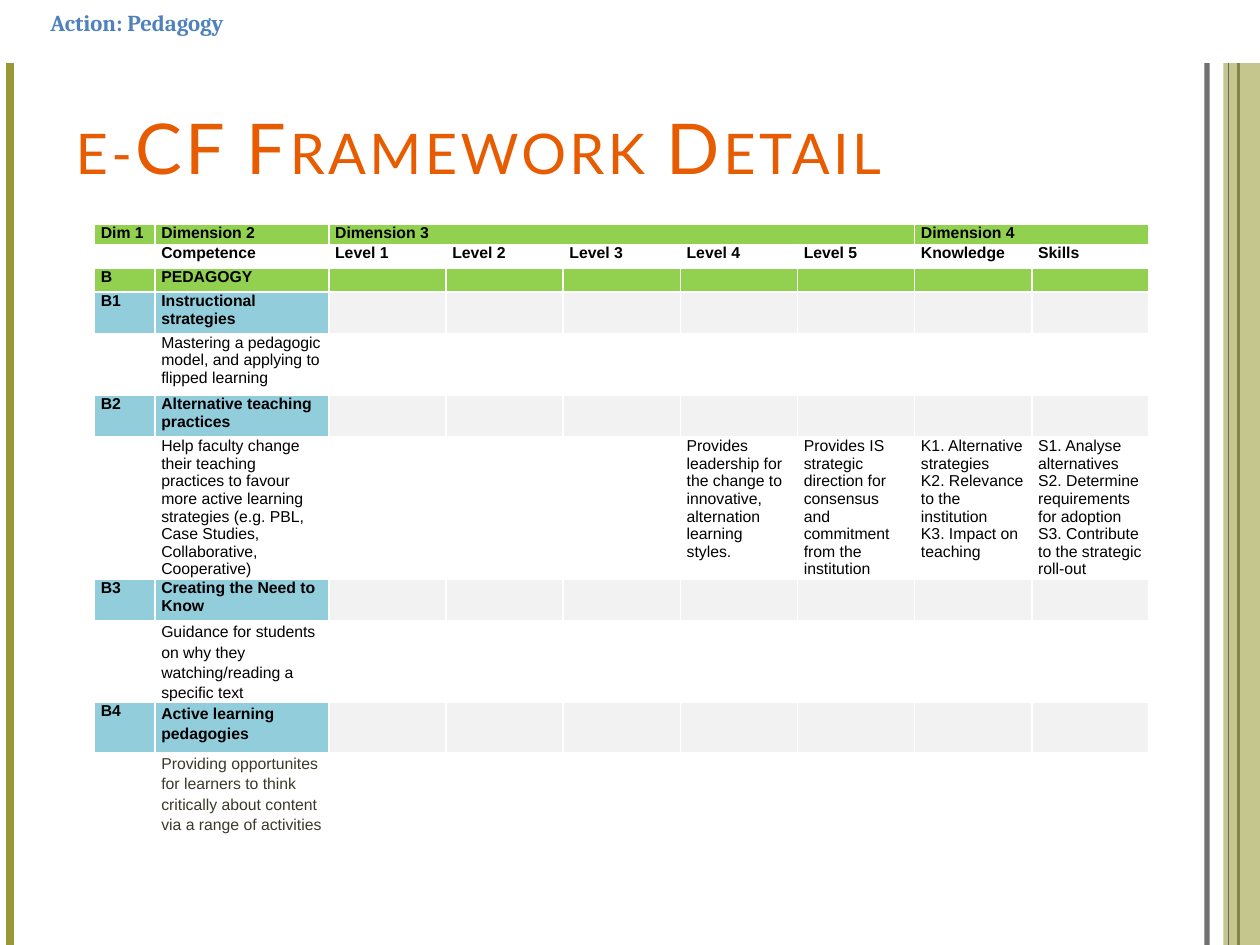
from dataclasses import dataclass

from lxml import etree
from pptx import Presentation
from pptx.dml.color import RGBColor as RGB
from pptx.enum.shapes import MSO_CONNECTOR as Connector, MSO_SHAPE as Shape
from pptx.enum.text import MSO_ANCHOR as Anchor, MSO_AUTO_SIZE as AutoSize, PP_ALIGN as Align
from pptx.oxml.ns import qn
from pptx.util import Inches, Pt


@dataclass(frozen=True)
class Theme:
    olive: str = "989836"
    grey: str = "666666"
    orange: str = "E75C01"
    blue: str = "4F81BD"
    green: str = "92D050"
    aqua: str = "92CDDC"
    pale: str = "F2F2F2"
    white: str = "FFFFFF"
    black: str = "000000"
    brown: str = "3B392A"
    title_size: int = 40
    banner_size: int = 13
    table_size: int = 9


theme = Theme()


def set_alpha(fill_parent, percent):
    color = fill_parent.find(".//" + qn("a:srgbClr"))
    etree.SubElement(color, qn("a:alpha"), val=str(percent * 1000))


def style_font(font, name, size, color, bold=False):
    font.name = name
    font.size = Pt(size)
    font.bold = bold
    font.color.rgb = RGB.from_string(color)


prs = Presentation()
prs.slide_width, prs.slide_height = Inches(10), Inches(7.5)
slide = prs.slides.add_slide(prs.slide_layouts[5])
shapes = slide.shapes

stripe = None
for x, color, width, opacity in [
    (9.58, theme.grey, 3, 93),
    (0.08, theme.olive, 4.5, 100),
    (9.83, theme.grey, 1.5, 100),
    (9.75, theme.grey, 0.75, 100),
]:
    if x == 9.75:
        stripe = shapes.add_shape(Shape.RECTANGLE, Inches(9.71), 0, Inches(0.33), prs.slide_height)
        stripe.shadow.inherit = False
        stripe.fill.solid()
        stripe.fill.fore_color.rgb = RGB.from_string(theme.olive)
        stripe.line.fill.background()
        set_alpha(stripe.element.spPr, 56)
    rule = shapes.add_connector(Connector.STRAIGHT, Inches(x), 0, Inches(x), prs.slide_height)
    rule.line.color.rgb = RGB.from_string(color)
    rule.line.width = Pt(width)
    if opacity < 100:
        set_alpha(rule.element.spPr, opacity)
    etree.SubElement(rule.element.spPr, qn("a:effectLst"))

title = shapes.title
title.left, title.top = Inches(0.5), Inches(0.3)
title.width, title.height = Inches(8.67), Inches(1.25)
title.text_frame.text = "e-CF Framework Detail"
title.text_frame.vertical_anchor = Anchor.BOTTOM
title.text_frame.auto_size = AutoSize.NONE
heading = title.text_frame.paragraphs[0]
heading.alignment = Align.LEFT
style_font(heading.runs[0].font, "Lato", theme.title_size, theme.orange)
heading_props = heading.runs[0].font._element
heading_props.set("cap", "small")
heading_props.set("spc", "200")

columns = [0.48, 1.38] + [0.93] * 7
levels = [f"Level {n}" for n in range(1, 6)]
rows = [
    (0.16, "band", ["Dim 1", "Dimension 2", "Dimension 3", "", "", "", "", "Dimension 4"]),
    (0.19, "labels", ["", "Competence", *levels, "Knowledge", "Skills"]),
    (0.19, "band", ["B", "PEDAGOGY"]),
    (0.33, "competence", ["B1", "Instructional strategies"]),
    (0.49, "detail", ["", "Mastering a pedagogic model, and applying to flipped learning"]),
    (0.33, "competence", ["B2", "Alternative teaching practices"]),
    (1.13, "detail", [
        "",
        "Help faculty change their teaching practices to favour more active learning "
        "strategies (e.g. PBL, Case Studies, Collaborative, Cooperative)",
        "", "", "",
        "Provides leadership for the change to innovative, alternation learning styles.",
        "Provides IS strategic direction for consensus and commitment from the institution",
        "K1. Alternative strategies\nK2. Relevance to the institution\nK3. Impact on teaching",
        "S1. Analyse alternatives\nS2. Determine requirements for adoption\n"
        "S3. Contribute to the strategic roll-out",
    ]),
    (0.33, "competence", ["B3", "Creating the Need to Know"]),
    (0.64, "detail", ["", "Guidance for students on why they watching/reading a specific text"]),
    (0.4, "competence", ["B4", "Active learning pedagogies"]),
    (0.65, "detail", [
        "",
        "Providing opportunites for learners to think critically about content "
        "via a range of activities",
    ]),
]
fills = {
    "band": (theme.green, theme.green),
    "competence": (theme.aqua, theme.pale),
    "labels": (None, None),
    "detail": (None, None),
}
first_loose_row = 8
last_row = len(rows) - 1

framework = shapes.add_table(
    len(rows), len(columns), Inches(0.75), Inches(1.78),
    Inches(sum(columns)), Inches(sum(height for height, _, _ in rows)),
).table
framework.first_row = False
framework.horz_banding = False
for column, width in zip(framework.columns, columns):
    column.width = Inches(width)

for r, (height, kind, texts) in enumerate(rows):
    framework.rows[r].height = Inches(height)
    for c in range(len(columns)):
        cell = framework.cell(r, c)
        cell.margin_left = cell.margin_right = Inches(0.05)
        cell.margin_top = cell.margin_bottom = 0
        fill = fills[kind][0 if c < 2 else 1]
        if fill:
            cell.fill.solid()
            cell.fill.fore_color.rgb = RGB.from_string(fill)
        else:
            cell.fill.background()
        cell_props = cell._tc.get_or_add_tcPr()
        for i, side in enumerate(("lnL", "lnR", "lnT", "lnB")):
            border = etree.Element(qn(f"a:{side}"), w=str(Pt(1)))
            solid = etree.SubElement(border, qn("a:solidFill"))
            etree.SubElement(solid, qn("a:srgbClr"), val=theme.white)
            cell_props.insert(i, border)
        cell.text_frame.text = texts[c] if c < len(texts) else ""
        for paragraph in cell.text_frame.paragraphs:
            if r >= first_loose_row and c == 1:
                paragraph.line_spacing = 1.15
            for run in paragraph.runs:
                color = theme.brown if r == last_row else theme.black
                style_font(run.font, "Arial", theme.table_size, color, kind != "detail")
            if not paragraph.runs:
                etree.SubElement(paragraph._p, qn("a:endParaRPr"), sz=str(theme.table_size * 100))

framework.cell(0, 2).merge(framework.cell(0, 6))
framework.cell(0, 7).merge(framework.cell(0, 8))

banner = shapes.add_shape(Shape.RECTANGLE, 0, 0, prs.slide_width, Inches(0.5))
banner.shadow.inherit = False
banner.fill.solid()
banner.fill.fore_color.rgb = RGB.from_string(theme.white)
banner.line.fill.background()
action = banner.text_frame
action.text = "Action: Pedagogy"
action.word_wrap = True
action.vertical_anchor = Anchor.TOP
action.margin_left, action.margin_top = Inches(0.4), Inches(0.07)
action.paragraphs[0].alignment = Align.LEFT
style_font(action.paragraphs[0].runs[0].font, "Cambria", theme.banner_size, theme.blue, True)

prs.save("out.pptx")
